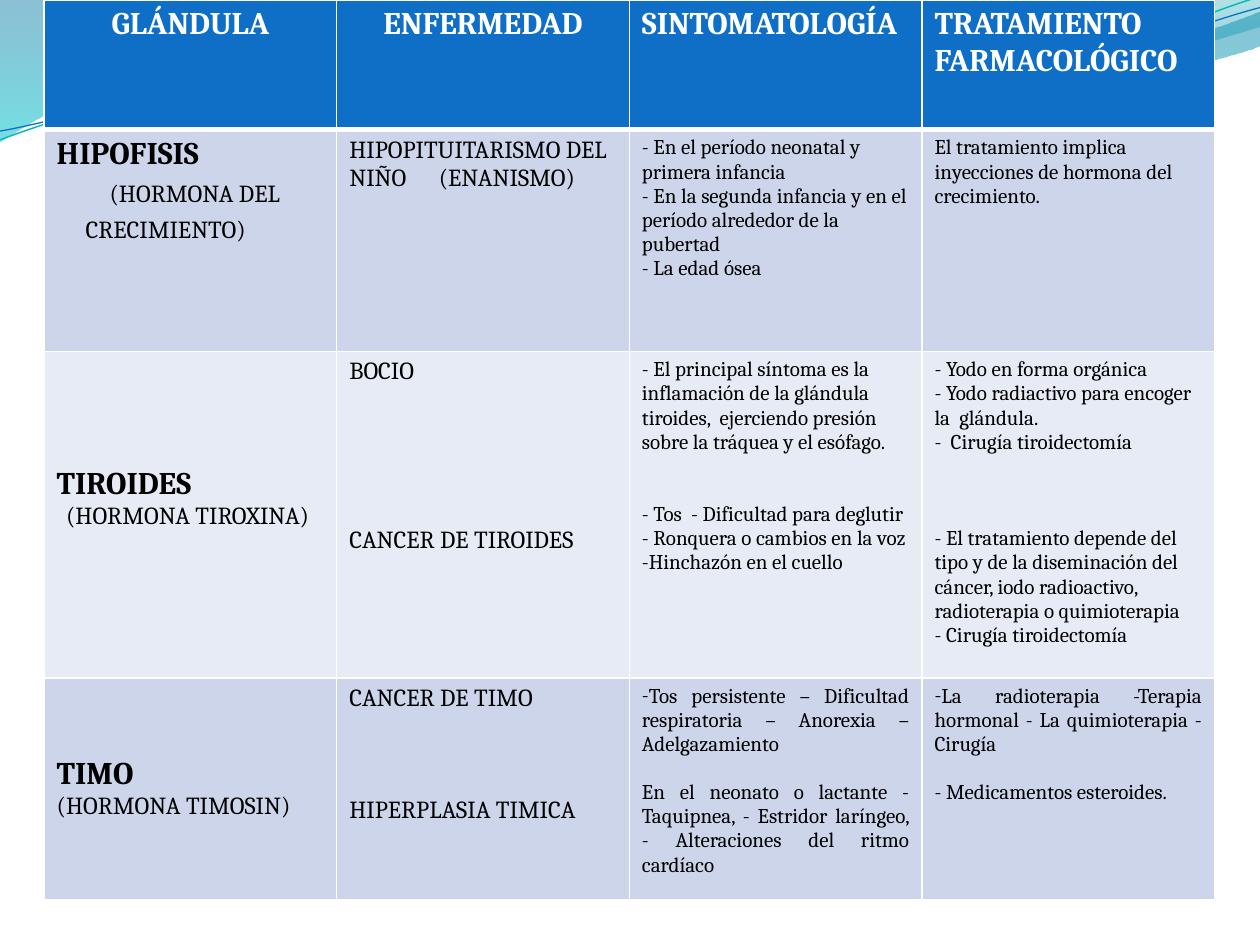
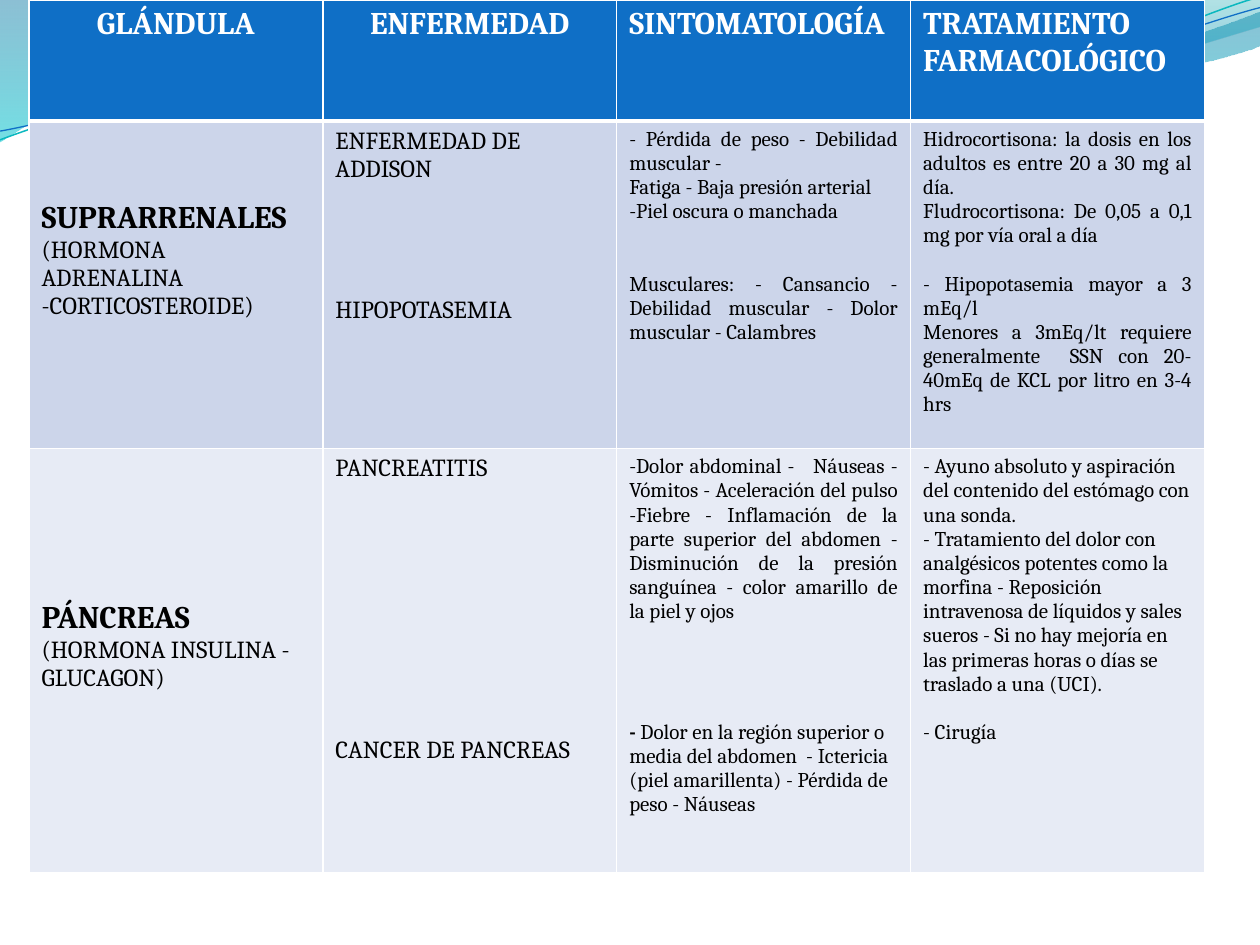
"""Build two slides that tabulate glands, diseases, symptoms and drug treatment."""
from dataclasses import dataclass
from math import cos, radians, sin

from lxml import etree
from pptx import Presentation
from pptx.dml.color import RGBColor
from pptx.enum.text import MSO_ANCHOR, PP_ALIGN
from pptx.oxml.ns import qn
from pptx.util import Pt

PX = 9144
LEFT, CENTER, JUSTIFY = PP_ALIGN.LEFT, PP_ALIGN.CENTER, PP_ALIGN.JUSTIFY
TOP = MSO_ANCHOR.TOP
TILT = 2.7


@dataclass(frozen=True)
class Theme:
    font: str = "Cambria"
    header: str = "0F6FC6"
    bands: tuple = ("CCD5EA", "E7EBF5")
    white: str = "FFFFFF"
    black: str = "000000"
    title_size: int = 18
    label_size: int = 14
    note_size: int = 12
    line_height: float = 1.15


THEME = Theme()
COLUMN_SIZES = (THEME.title_size, THEME.label_size, THEME.note_size, THEME.note_size)

KINDS = {
    "left": {"alignment": LEFT},
    "center": {"alignment": CENTER},
    "justify": {"alignment": JUSTIFY},
    "dash": {"alignment": JUSTIFY},
    "tab": {"alignment": LEFT},
    "stagger": {"alignment": LEFT, "line_spacing": Pt(20.5)},
}
INDENTS = {
    "dash": {"marL": 0, "indent": 0},
    "stagger": {"marL": 23 * PX, "indent": 19 * PX},
}

WAVES = [
    {"start": (0, 0),
     "segments": [(440, -1), (476, 17, 664, 63, 758, 63), (853, 63, 958, 26, 1000, 9),
                  (1001, 36), (983, 44, 870, 76, 746, 75), (622, 75, 382, 28, 257, 34),
                  (129, 36, 46, 83, -1, 113), (0, 0)],
     "stops": [(0, "0074A1", 45), (1, "00C6CF", 55)]},
    {"start": (479, -1),
     "segments": [(509, 11, 682, 62, 769, 65), (856, 69, 961, 32, 1000, 21), (1000, 0),
                  (479, -1)],
     "stops": [(0, "00A1A9", 30), (0.8, "008BBF", 45)]},
    {"start": (0, 111), "center": (499, 58),
     "segments": [(48, 93, 158, 57, 277, 52), (395, 47, 593, 89, 713, 80),
                  (833, 71, 938, 15, 998, -2)],
     "line": ("0AB8BF", 0.85)},
    {"start": (0, 104), "center": (499, 59),
     "segments": [(47, 96, 164, 61, 283, 56), (403, 51, 597, 84, 717, 75),
                  (836, 67, 941, 21, 1000, 6)],
     "line": ("0F6FC6", 0.75)},
]

HEADER = [
    [(0, "center", "GLÁNDULA")],
    [(0, "center", "ENFERMEDAD")],
    [(0, "left", "SINTOMATOLOGÍA")],
    [(0, "left", "TRATAMIENTO FARMACOLÓGICO")],
]

HIPOFISIS = [
    [(0, "left", "HIPOFISIS"), (0, "stagger", "(HORMONA DEL CRECIMIENTO)")],
    [(0, "tab", "HIPOPITUITARISMO DEL NIÑO\t(ENANISMO)")],
    [(0, "left", "- En el período neonatal y primera infancia"),
     (0, "left", "- En la segunda infancia y en el período alrededor de la pubertad"),
     (0, "left", "- La edad ósea")],
    [(0, "left", "El tratamiento implica inyecciones de hormona del crecimiento.")],
]
TIROIDES = [
    [(3, "left", "TIROIDES"), (0, "center", "(HORMONA TIROXINA) ")],
    [(0, "left", "BOCIO"), (5, "left", "CANCER DE TIROIDES")],
    [(0, "left", "- El principal síntoma es la inflamación de la glándula tiroides,  "
                 "ejerciendo presión sobre la tráquea y el esófago."),
     (2, "left", "- Tos  - Dificultad para deglutir  - Ronquera o cambios en la voz "
                 "-Hinchazón en el cuello")],
    [(0, "justify", "- Yodo en forma orgánica"),
     (0, "left", "- Yodo radiactivo para encoger la  glándula."),
     (0, "left", "-  Cirugía tiroidectomía"),
     (3, "left", "- El tratamiento depende del tipo y de la diseminación del cáncer, "
                 "iodo radioactivo, radioterapia o quimioterapia"),
     (0, "left", "- Cirugía tiroidectomía")],
]
TIMO = [
    [(2, "left", "TIMO"), (0, "left", "(HORMONA TIMOSIN)")],
    [(0, "left", "CANCER DE TIMO"), (3, "left", "HIPERPLASIA TIMICA")],
    [(0, "dash", "Tos persistente – Dificultad respiratoria – Anorexia – Adelgazamiento"),
     (1, "justify", "En el neonato o lactante - Taquipnea, - Estridor laríngeo, "
                    "- Alteraciones del ritmo cardíaco")],
    [(0, "dash", "La radioterapia -Terapia hormonal - La quimioterapia - Cirugía"),
     (1, "justify", "- Medicamentos esteroides.")],
]
SUPRARRENALES = [
    [(2, "left", "SUPRARRENALES"), (0, "left", "(HORMONA ADRENALINA -CORTICOSTEROIDE)")],
    [(0, "left", "ENFERMEDAD DE ADDISON"), (4, "left", "HIPOPOTASEMIA")],
    [(0, "justify", "- Pérdida de peso - Debilidad muscular -"),
     (0, "justify", "Fatiga - Baja presión arterial"),
     (0, "dash", "Piel oscura o manchada"),
     (2, "justify", "Musculares: - Cansancio - Debilidad muscular - Dolor muscular "
                    "- Calambres")],
    [(0, "justify", "Hidrocortisona: la dosis en los adultos es entre 20 a 30 mg al día."),
     (0, "justify", "Fludrocortisona: De 0,05 a 0,1 mg por vía oral a día"),
     (1, "justify", "- Hipopotasemia mayor a 3 mEq/l"),
     (0, "justify", "Menores a 3mEq/lt requiere generalmente  SSN con 20-40mEq de KCL "
                    "por litro en 3-4 hrs")],
]
PANCREAS = [
    [(4, "left", "PÁNCREAS"), (0, "left", "(HORMONA INSULINA - GLUCAGON)")],
    [(0, "left", "PANCREATITIS"), (9, "left", "CANCER DE PANCREAS")],
    [(0, "dash", "Dolor abdominal -   Náuseas - Vómitos - Aceleración del pulso -Fiebre "
                 "- Inflamación de la parte superior del abdomen - Disminución de la "
                 "presión sanguínea - color amarillo de la piel y ojos"),
     (4, "left", "|- |Dolor en la región superior o media del abdomen  - Ictericia "
                 "(piel amarillenta) - Pérdida de peso - Náuseas")],
    [(0, "left", "- Ayuno absoluto y aspiración del contenido del estómago con una sonda."),
     (0, "left", "- Tratamiento del dolor con analgésicos potentes como la morfina "
                 "- Reposición intravenosa de líquidos y sales sueros - Si no hay mejoría "
                 "en las primeras horas o días se traslado a una (UCI)."),
     (1, "justify", "- Cirugía")],
]

PAGES = [
    {"left": 35, "width": 929, "heights": (103, 176, 259, 176),
     "rows": (HEADER, HIPOFISIS, TIROIDES, TIMO)},
    {"left": 23, "width": 933, "heights": (96, 260, 337),
     "rows": (HEADER, SUPRARRENALES, PANCREAS)},
]


def draw_wave(page, wave):
    """Draw one outline whose six-number segments are cubic curves."""
    points = [wave["start"]]
    for segment in wave["segments"]:
        points += zip(segment[::2], segment[1::2])
    if "center" in wave:
        (cx, cy), turn = wave["center"], radians(TILT)
        points = [(cx + (x - cx) * cos(turn) - (y - cy) * sin(turn),
                   cy + (x - cx) * sin(turn) + (y - cy) * cos(turn)) for x, y in points]
    points = [(round(x * PX), round(y * PX)) for x, y in points]
    builder = page.shapes.build_freeform(*points[0], scale=1.0)
    builder.add_line_segments(points[1:], close="stops" in wave)
    shape = builder.convert_to_shape()
    shape.shadow.inherit = False
    nodes = list(shape._element.iter(qn("a:lnTo")))
    for segment in wave["segments"]:
        first, *others = [nodes.pop(0) for _ in range(len(segment) // 2)]
        if others:
            first.tag = qn("a:cubicBezTo")
        for node in others:
            first.append(node[0])
            node.getparent().remove(node)
    if "line" in wave:
        color, width = wave["line"]
        shape.rotation = 360 - TILT
        shape.fill.background()
        shape.line.color.rgb = RGBColor.from_string(color)
        shape.line.width = Pt(width)
        return shape
    shape.line.fill.background()
    shape.fill.gradient()
    shape.fill.gradient_angle = 270
    for stop, (position, color, opacity) in zip(shape.fill.gradient_stops, wave["stops"]):
        stop.position = position
        stop.color.rgb = RGBColor.from_string(color)
    colors = shape._element.spPr.iter(qn("a:srgbClr"))
    for node, (position, color, opacity) in zip(colors, wave["stops"]):
        etree.SubElement(node, qn("a:alpha"), val=str(opacity * 1000))
    return shape


def write_paragraph(para, kind, text, gap, size, bold, color):
    """Write one paragraph; text between bars is bold."""
    for name, value in {**KINDS[kind], "space_before": Pt(gap)}.items():
        setattr(para, name, value)
    properties = para._p.get_or_add_pPr()
    for name, value in INDENTS.get(kind, {}).items():
        properties.set(name, str(value))
    if kind == "dash":
        etree.SubElement(properties, qn("a:buFont"), typeface=THEME.font)
        etree.SubElement(properties, qn("a:buChar"), char="-")
    if kind == "tab":
        stops = etree.SubElement(properties, qn("a:tabLst"))
        etree.SubElement(stops, qn("a:tab"), pos=str(71 * PX), algn="l")
    for index, part in enumerate(text.split("|")):
        if part:
            span = para.add_run()
            span.text = part
            look = {"name": THEME.font, "size": Pt(size), "bold": bold or index % 2 == 1}
            for name, value in look.items():
                setattr(span.font, name, value)
            span.font.color.rgb = RGBColor.from_string(color)


deck = Presentation()
deck.slide_width, deck.slide_height = 1000 * PX, 750 * PX
pages = [deck.slides.add_slide(deck.slide_layouts[6]) for _ in PAGES]
master_tree = deck.slide_master.shapes._spTree
for wave in WAVES:
    master_tree.append(draw_wave(pages[0], wave)._element)

for page, content in zip(pages, PAGES):
    rows, heights, width = content["rows"], content["heights"], content["width"] * PX
    table = page.shapes.add_table(len(rows), len(HEADER), content["left"] * PX, 0,
                                  width, sum(heights) * PX).table
    for column in table.columns:
        column.width = width // len(HEADER)
    for row_index, row in enumerate(rows):
        table.rows[row_index].height = heights[row_index] * PX
        is_header = row_index == 0
        fill = THEME.header if is_header else THEME.bands[(row_index - 1) % 2]
        color = THEME.white if is_header else THEME.black
        borders = {"lnL": 1, "lnR": 1, "lnT": 3 if row_index == 1 else 1,
                   "lnB": 3 if is_header else 1}
        for column_index, paragraphs in enumerate(row):
            cell = table.cell(row_index, column_index)
            properties = cell._tc.get_or_add_tcPr()
            for side, points in borders.items():
                border = etree.SubElement(properties, qn(f"a:{side}"), w=str(Pt(points)))
                solid = etree.SubElement(border, qn("a:solidFill"))
                etree.SubElement(solid, qn("a:srgbClr"), val=THEME.white)
            cell.fill.solid()
            cell.fill.fore_color.rgb = RGBColor.from_string(fill)
            cell.vertical_anchor = TOP
            for order, (blank_lines, kind, text) in enumerate(paragraphs):
                is_title = is_header or (column_index == 0 and order == 0)
                size = COLUMN_SIZES[column_index]
                gap = blank_lines * size * THEME.line_height
                if is_title:
                    size = THEME.title_size
                elif column_index == 0:
                    size = THEME.label_size
                if order == 0:
                    cell.margin_top = 5 * PX + Pt(gap)
                    para, gap = cell.text_frame.paragraphs[0], 0
                else:
                    para = cell.text_frame.add_paragraph()
                write_paragraph(para, kind, text, gap, size, is_title, color)

deck.save("out.pptx")
